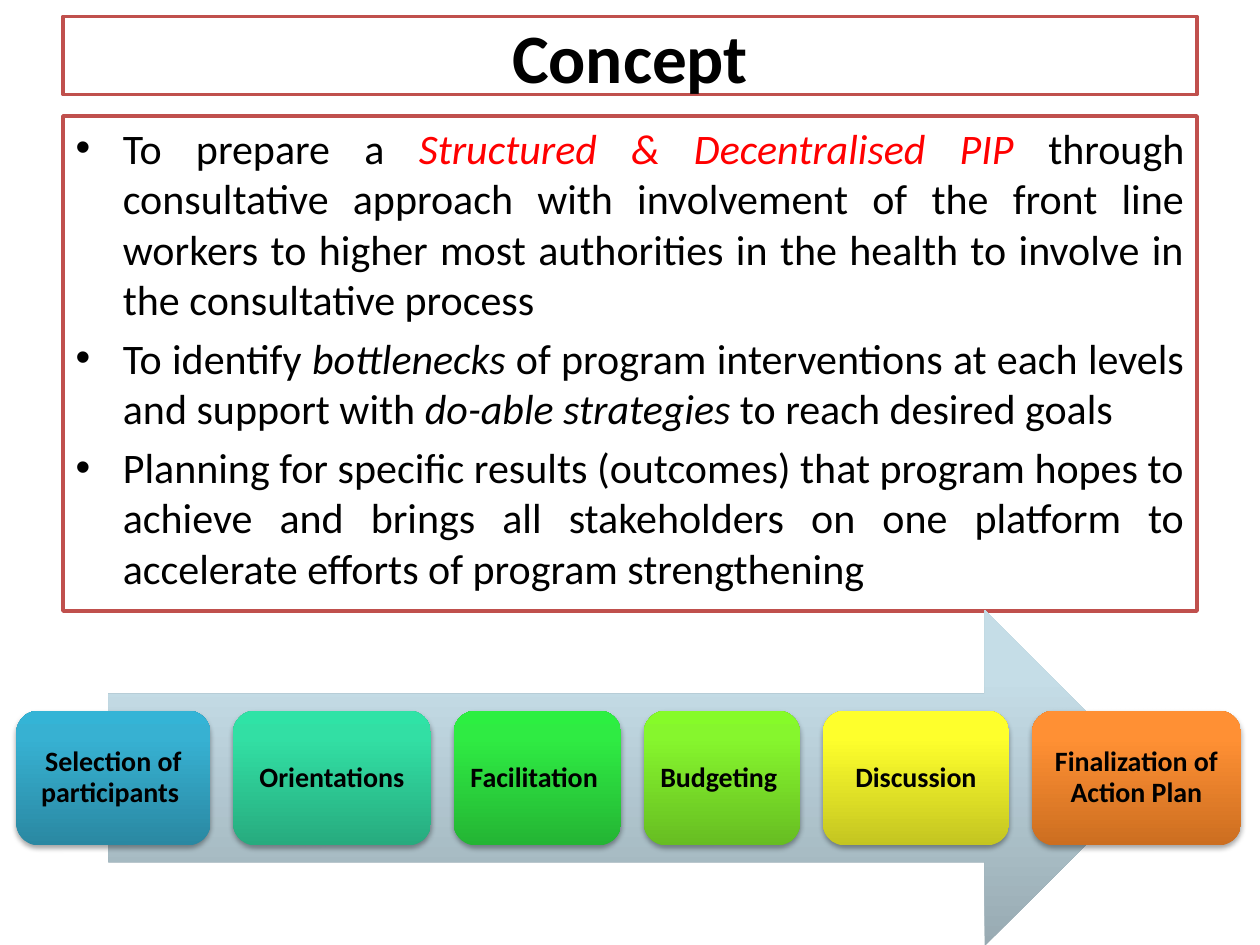
"""Build the Concept slide with its goals and six-step process arrow."""
from copy import deepcopy

from lxml.etree import SubElement
from pptx import Presentation
from pptx.dml.color import RGBColor
from pptx.enum.shapes import MSO_SHAPE as Shape
from pptx.enum.text import MSO_ANCHOR as Anchor, MSO_AUTO_SIZE as AutoSize, PP_ALIGN as Align
from pptx.oxml.ns import qn
from pptx.util import Inches, Pt


def color(value):
    return RGBColor.from_string(value)


def add_gradient_shape(kind, left, top, width, height, colors):
    shape = slide.shapes.add_shape(kind, Inches(left), Inches(top), Inches(width), Inches(height))
    shape.shadow.inherit = False
    shape.line.fill.background()
    shape.fill.gradient()
    shape.fill.gradient_angle = 90
    stop_list = shape._element.spPr.find(".//" + qn("a:gsLst"))
    stop_list.append(deepcopy(stop_list[0]))
    for stop, position, value in zip(shape.fill.gradient_stops, (0, 0.8, 1), colors):
        stop.position = position
        stop.color.rgb = color(value)
    return shape


presentation = Presentation()
presentation.slide_width = Inches(10)
presentation.slide_height = Inches(7.5)
slide = presentation.slides.add_slide(presentation.slide_layouts[1])
title, body = slide.placeholders

for placeholder, top, height in ((title, 0.13, 0.62), (body, 0.92, 3.93)):
    placeholder.left, placeholder.top = Inches(0.5), Inches(top)
    placeholder.width, placeholder.height = Inches(9), Inches(height)
    placeholder.fill.solid()
    placeholder.fill.fore_color.rgb = color("FFFFFF")
    placeholder.line.color.rgb = color("C0504D")
    placeholder.line.width = Pt(2)
    placeholder.text_frame.auto_size = AutoSize.NONE

title.text_frame.text = "Concept"
title.text_frame.vertical_anchor = Anchor.MIDDLE
title_paragraph = title.text_frame.paragraphs[0]
title_paragraph.alignment = Align.CENTER
title_font = title_paragraph.runs[0].font
title_font.name, title_font.size, title_font.bold = "Calibri", Pt(39.6), True
title_font.color.rgb = color("000000")

goals = [
    [("To prepare a ", "000000", False),
     ("Structured & Decentralised PIP ", "FF0000", True),
     ("through consultative approach with involvement of the front line workers to higher most "
      "authorities in the health to involve in the consultative process ", "000000", False)],
    [("To identify ", "000000", False),
     ("bottlenecks", "000000", True),
     (" of program interventions at each levels and support with ", "000000", False),
     ("do-able strategies ", "000000", True),
     ("to reach desired goals", "000000", False)],
    [("Planning for specific results (outcomes) that program hopes to achieve and brings all "
      "stakeholders on one platform to accelerate efforts of program strengthening ",
      "000000", False)],
]
for index, goal in enumerate(goals):
    paragraph = body.text_frame.add_paragraph() if index else body.text_frame.paragraphs[0]
    paragraph.alignment = Align.JUSTIFY
    for text, value, italic in goal:
        run = paragraph.add_run()
        run.text = text
        run.font.name, run.font.size, run.font.italic = "Calibri", Pt(24), italic
        run.font.color.rgb = color(value)

add_gradient_shape(Shape.RIGHT_ARROW, 0.86, 4.84, 8.29, 2.67, ("98AAB2", "C5DDE7", "C6DEE9"))

steps = [
    ("Selection of participants ", 1.54, ("2A88A2", "37B1D2", "34B4D6")),
    ("Orientations", 1.57, ("27AB7E", "32DFA4", "2FE3A6")),
    ("Facilitation ", 1.33, ("24B534", "2FEB43", "2CEF41")),
    ("Budgeting ", 1.24, ("67BD22", "86F62D", "86FB29")),
    ("Discussion", 1.48, ("C4C521", "FEFF2C", "FEFF2D")),
    ("Finalization of Action Plan", 1.66, ("CC6E20", "FF9034", "FF9136")),
]
left, gap = 0.13, 0.18
for text, width, colors in steps:
    step = add_gradient_shape(Shape.ROUNDED_RECTANGLE, left, 5.64, width, 1.07, colors)
    left += width + gap
    effects = step._element.spPr.find(qn("a:effectLst"))
    shadow = SubElement(effects, qn("a:outerShdw"), blurRad=str(Pt(3.1)), dist=str(Pt(1.8)),
                        dir="5400000", rotWithShape="0")
    shadow_color = SubElement(shadow, qn("a:srgbClr"), val="000000")
    SubElement(shadow_color, qn("a:alpha"), val="35000")

    frame = step.text_frame
    frame.text = text
    frame.word_wrap = True
    frame.vertical_anchor = Anchor.MIDDLE
    frame.margin_left = frame.margin_right = Inches(0.07)
    frame.margin_top = frame.margin_bottom = Inches(0.07)
    paragraph = frame.paragraphs[0]
    paragraph.alignment = Align.CENTER
    paragraph.line_spacing = 0.9
    font = paragraph.runs[0].font
    font.name, font.size, font.bold = "Calibri", Pt(16), True
    font.color.rgb = color("000000")

presentation.save("out.pptx")
